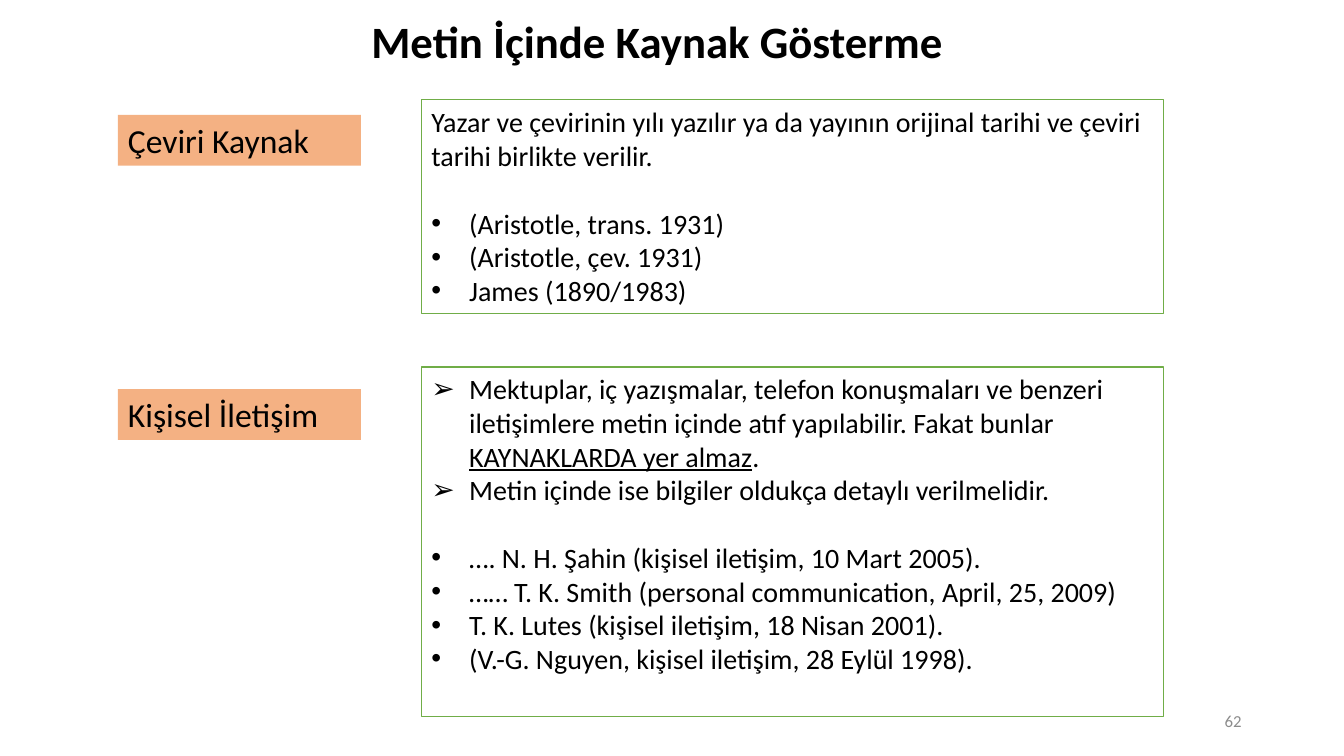
from lxml.etree import SubElement
from pptx import Presentation
from pptx.dml.color import RGBColor
from pptx.enum.shapes import MSO_SHAPE as Shape
from pptx.enum.text import MSO_ANCHOR as Anchor, MSO_AUTO_SIZE as AutoSize, PP_ALIGN as Align
from pptx.oxml.ns import qn
from pptx.util import Pt

BLACK = RGBColor(0x00, 0x00, 0x00)
WHITE = RGBColor(0xFF, 0xFF, 0xFF)
GRAY = RGBColor(0x8C, 0x8C, 0x8C)
ORANGE = RGBColor(0xF4, 0xB1, 0x83)
GREEN = RGBColor(0x70, 0xAD, 0x47)

DOT, ARROW = "•", "➢"
INDENT = Pt(27)
BLANK_LINE = 24.4


def add_text(paragraph, text, size=20, color=BLACK, bold=False, underline=False,
             align=Align.LEFT, bullet=None, space_before=0):
    properties = paragraph._p.get_or_add_pPr()
    if bullet and not paragraph.runs:
        properties.set("marL", str(INDENT))
        properties.set("indent", str(-INDENT))
        SubElement(properties, qn("a:buFont"), typeface="Arial")
        SubElement(properties, qn("a:buChar"), char=bullet)
    paragraph.alignment = align
    paragraph.space_before = Pt(space_before)
    run = paragraph.add_run()
    run.text = text
    run.font.name = "Calibri"
    run.font.size = Pt(size)
    run.font.bold = bold
    run.font.underline = underline
    run.font.color.rgb = color


def add_box(left, top, width, height, fill, line=None):
    shape = slide.shapes.add_shape(Shape.RECTANGLE, Pt(left), Pt(top), Pt(width), Pt(height))
    shape.shadow.inherit = False
    shape.fill.solid()
    shape.fill.fore_color.rgb = fill
    if line is None:
        shape.line.fill.background()
    else:
        shape.line.color.rgb = line
        shape.line.width = Pt(1)
    shape.text_frame.word_wrap = True
    shape.text_frame.vertical_anchor = Anchor.TOP
    return shape.text_frame


presentation = Presentation()
presentation.slide_width = Pt(960)
presentation.slide_height = Pt(540)
slide = presentation.slides.add_slide(presentation.slide_layouts[5])

title = slide.shapes.title
title.left, title.top, title.width, title.height = Pt(258), Pt(-1), Pt(549), Pt(65.5)
title.text_frame.word_wrap = True
title.text_frame.auto_size = AutoSize.NONE
title.text_frame.vertical_anchor = Anchor.MIDDLE
title.text_frame.paragraphs[0].line_spacing = 0.9
add_text(title.text_frame.paragraphs[0], "Metin İçinde Kaynak Gösterme", size=32, bold=True)

translation_lines = [
    (None, 0, ["Yazar ve çevirinin yılı yazılır ya da yayının orijinal tarihi ve çeviri "
               "tarihi birlikte verilir."]),
    (DOT, BLANK_LINE, ["(Aristotle, trans. 1931)"]),
    (DOT, 0, ["(Aristotle, çev. 1931)"]),
    (DOT, 0, ["James (1890/1983)"]),
]
communication_lines = [
    (ARROW, 0, ["Mektuplar, iç yazışmalar, telefon konuşmaları ve benzeri iletişimlere "
                "metin içinde atıf yapılabilir. Fakat bunlar ", "KAYNAKLARDA yer almaz", "."]),
    (ARROW, 0, ["Metin içinde ise bilgiler oldukça detaylı verilmelidir."]),
    (DOT, BLANK_LINE, ["…. N. H. Şahin (kişisel iletişim, 10 Mart 2005)."]),
    (DOT, 0, ["…… T. K. Smith (personal communication, April, 25, 2009)"]),
    (DOT, 0, ["T. K. Lutes (kişisel iletişim, 18 Nisan 2001)."]),
    (DOT, 0, ["(V.-G. Nguyen, kişisel iletişim, 28 Eylül 1998)."]),
]
sections = [
    ("Çeviri Kaynak", 82, 71.25, 152.75, translation_lines),
    ("Kişisel İletişim", 278, 262, 250, communication_lines),
]

for label, label_top, box_top, box_height, lines in sections:
    label_frame = add_box(84.25, label_top, 173.5, 36.35, ORANGE)
    add_text(label_frame.paragraphs[0], label, size=24)
    box_frame = add_box(301, box_top, 530, box_height, WHITE, GREEN)
    for index, (bullet, space_before, parts) in enumerate(lines):
        paragraph = box_frame.add_paragraph() if index else box_frame.paragraphs[0]
        for part_index, part in enumerate(parts):
            add_text(paragraph, part, bullet=bullet, space_before=space_before,
                     underline=part_index == 1)

page_number = slide.shapes.add_textbox(Pt(678), Pt(500.5), Pt(216), Pt(28.75))
page_number.text_frame.word_wrap = True
page_number.text_frame.vertical_anchor = Anchor.MIDDLE
add_text(page_number.text_frame.paragraphs[0], "62", size=12, color=GRAY, align=Align.RIGHT)

presentation.save("out.pptx")
